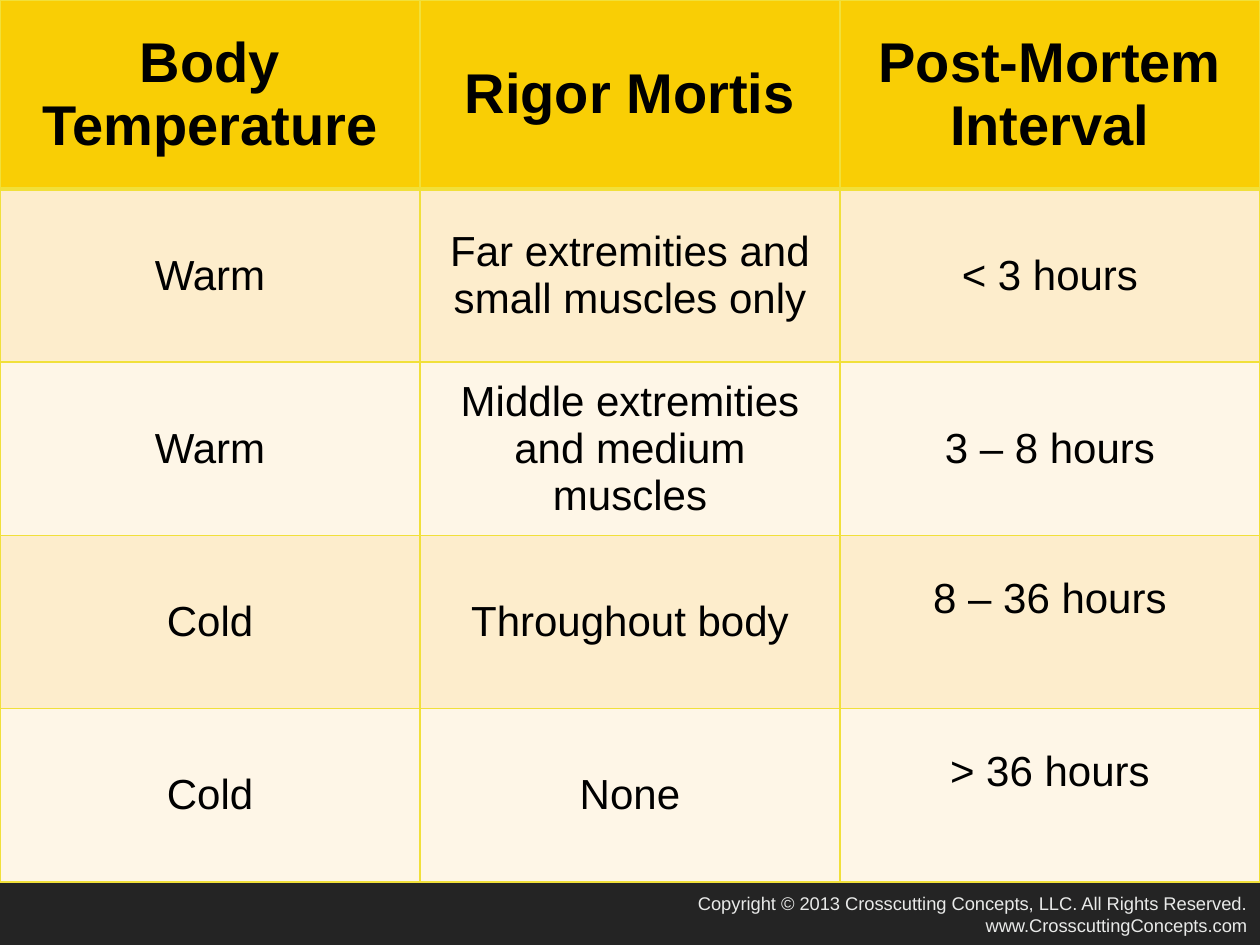
from dataclasses import dataclass

from lxml import etree
from pptx import Presentation
from pptx.dml.color import RGBColor
from pptx.enum import text
from pptx.oxml import ns
from pptx.util import Inches, Pt


@dataclass(frozen=True)
class Theme:
    font: str = "Arial"
    background_top: str = "313233"
    background_bottom: str = "242424"
    header_fill: str = "F9CE05"
    band_fills: tuple = ("FDEDCC", "FEF6E7")
    border: str = "F1E03A"
    table_text: str = "000000"
    footer_text: str = "E9EAE9"
    header_size: float = 32
    body_size: float = 24
    footer_size: float = 10.5
    thin_border: float = 1
    thick_border: float = 3


THEME = Theme()

ROWS = [
    ("Body Temperature", "Rigor Mortis", "Post-Mortem Interval"),
    ("Warm", "Far extremities and small muscles only", "< 3 hours"),
    ("Warm", "Middle extremities and medium muscles", "3 – 8 hours"),
    ("Cold", "Throughout body", "8 – 36 hours"),
    ("Cold", "None", "> 36 hours"),
]
RAISED_CELLS = {(3, 2), (4, 2)}
FOOTER_LINES = [
    "Copyright © 2013 Crosscutting Concepts, LLC. All Rights Reserved.",
    "www.CrosscuttingConcepts.com",
]


def add_run(paragraph, words, size, color, bold=False):
    run = paragraph.add_run()
    run.text = words
    run.font.name = THEME.font
    run.font.size = Pt(size)
    run.font.bold = bold
    run.font.color.rgb = RGBColor.from_string(color)


def set_borders(cell, top, bottom):
    properties = cell._tc.get_or_add_tcPr()
    widths = {"lnL": THEME.thin_border, "lnR": THEME.thin_border, "lnT": top, "lnB": bottom}
    for position, (side, width) in enumerate(widths.items()):
        line = etree.Element(ns.qn(f"a:{side}"), w=str(Pt(width)))
        fill = etree.SubElement(line, ns.qn("a:solidFill"))
        etree.SubElement(fill, ns.qn("a:srgbClr"), val=THEME.border)
        properties.insert(position, line)


def set_background(slide):
    fill = slide.background.fill
    fill.gradient()
    fill.gradient_angle = 270
    colors = (THEME.background_top, THEME.background_bottom)
    for stop, color, position in zip(fill.gradient_stops, colors, (0, 1)):
        stop.color.rgb = RGBColor.from_string(color)
        stop.position = position


def fill_cell(cell, row, column):
    header = row == 0
    color = THEME.header_fill if header else THEME.band_fills[(row - 1) % 2]
    cell.fill.solid()
    cell.fill.fore_color.rgb = RGBColor.from_string(color)
    cell.vertical_anchor = text.MSO_ANCHOR.MIDDLE
    if (row, column) in RAISED_CELLS:
        cell.margin_bottom = Inches(0.42)
    set_borders(
        cell,
        top=THEME.thick_border if row == 1 else THEME.thin_border,
        bottom=THEME.thick_border if header else THEME.thin_border,
    )
    paragraph = cell.text_frame.paragraphs[0]
    paragraph.alignment = text.PP_ALIGN.CENTER
    size = THEME.header_size if header else THEME.body_size
    add_run(paragraph, ROWS[row][column], size, THEME.table_text, header)


def add_evidence_table(slide, left, top, width, height):
    header_height = Inches(1.5)
    column_count = len(ROWS[0])
    table = slide.shapes.add_table(len(ROWS), column_count, left, top, width, height).table
    for column in table.columns:
        column.width = width // column_count
    for index, row in enumerate(table.rows):
        row.height = header_height if index == 0 else (height - header_height) // (len(ROWS) - 1)
        for column, cell in enumerate(row.cells):
            fill_cell(cell, index, column)


def add_footer(slide, left, top, width, height):
    frame = slide.shapes.add_textbox(left, top, width, height).text_frame
    frame.word_wrap = True
    for index, line in enumerate(FOOTER_LINES):
        paragraph = frame.add_paragraph() if index else frame.paragraphs[0]
        paragraph.alignment = text.PP_ALIGN.RIGHT
        add_run(paragraph, line, THEME.footer_size, THEME.footer_text)


def main():
    presentation = Presentation()
    presentation.slide_width = Inches(10)
    presentation.slide_height = Inches(7.5)
    slide = presentation.slides.add_slide(presentation.slide_layouts[6])
    set_background(slide)
    add_footer(slide, Inches(3.36), Inches(7.03), Inches(6.64), Inches(0.45))
    add_evidence_table(slide, Inches(0), Inches(0), Inches(10), Inches(7))
    presentation.save("out.pptx")


if __name__ == "__main__":
    main()
